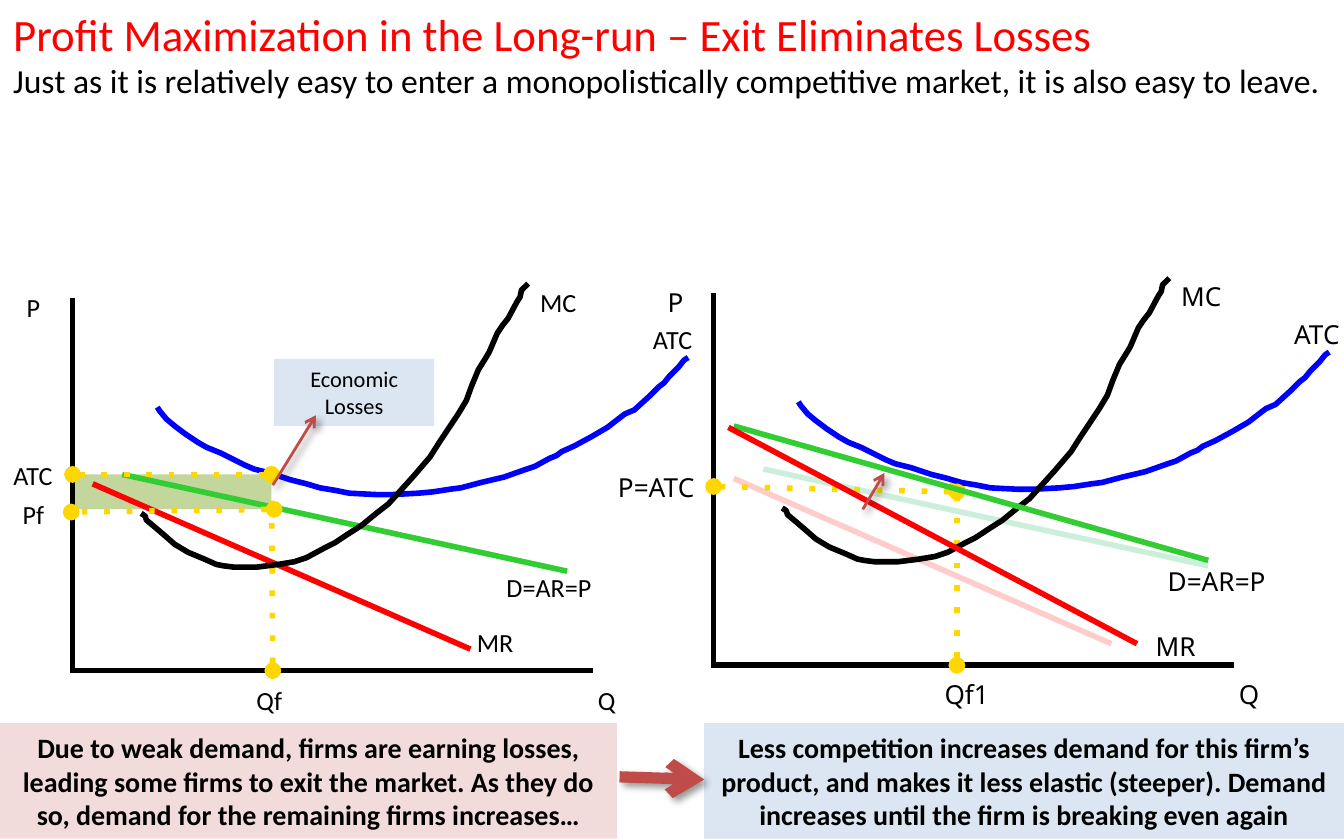
from pptx import Presentation
from pptx.dml.color import RGBColor as RGB
from pptx.enum.shapes import MSO_CONNECTOR as CONN, MSO_SHAPE as SHAPE
from pptx.enum.text import MSO_ANCHOR as ANCHOR, MSO_AUTO_SIZE as AUTO, PP_ALIGN as ALIGN
from pptx.oxml.ns import qn
from pptx.util import Emu, Pt
from lxml.etree import SubElement

PX = 9144  # one px is a hundredth of an inch

THEME = {
    "black": "000000", "red": "FF0000", "blue": "0000FF", "green": "32CD32",
    "old_green": "00B050", "gold": "FFD700", "arrow": "BF4C48",
    "loss": "C3D69B", "pale_blue": "DCE6F2", "pale_red": "F2DCDB",
    "font": "Calibri", "font_right": "Noto Sans",
    "title": 24, "subtitle": 18, "label": 14, "callout": 12, "note": 15,
    "curve": 3, "pointer": 1.5, "big_arrow": 6,
}

# Curves of the left market; the right market shifts them
ATC_CURVE = [
    (117, 303), (119, 306), (124, 312), (130, 317), (138, 323), (147, 329),
    (154, 333), (164, 337), (174, 342), (182, 346), (189, 349), (201, 352),
    (216, 357), (228, 360), (238, 363), (250, 365), (260, 367), (280, 368),
    (292, 368), (311, 367), (322, 366), (335, 364), (343, 363), (358, 359),
    (375, 355), (392, 349), (398, 347), (409, 341), (414, 339), (418, 336),
    (427, 332), (440, 325), (452, 318), (461, 311), (465, 308), (472, 305),
    (483, 295), (490, 288), (494, 285), (498, 280), (505, 273), (509, 268),
    (512, 266),
]
MC_CURVE = [
    (105, 382), (108, 384), (109, 387), (115, 392), (122, 398), (130, 405),
    (140, 411), (152, 416), (161, 420), (166, 421), (174, 422), (191, 422),
    (207, 420), (219, 418), (228, 415), (241, 408), (249, 404), (258, 398),
    (269, 391), (280, 382), (289, 375), (299, 364), (308, 354), (320, 340),
    (327, 329), (341, 308), (347, 298), (351, 287), (356, 275), (361, 267),
    (364, 262), (370, 248), (374, 242), (378, 237), (385, 224), (387, 221),
    (388, 216), (393, 211),
]


def px(*lengths):
    return [Emu(n * PX) for n in lengths]


def color(name):
    return RGB.from_string(THEME[name])


def assign(obj, **values):
    for name, value in values.items():
        setattr(obj, name, value)


def write(sp, lines, font="font", bold=False, align=ALIGN.LEFT, anchor=ANCHOR.TOP):
    """Fill a shape with paragraphs given as (text, size, colour)."""
    tf = sp.text_frame
    assign(tf, word_wrap=True, auto_size=AUTO.SHAPE_TO_FIT_TEXT, vertical_anchor=anchor)
    for i, (text, size, ink) in enumerate(lines):
        p = tf.paragraphs[0] if i == 0 else tf.add_paragraph()
        p.alignment = align
        r = p.add_run()
        r.text = text
        assign(r.font, name=THEME[font], size=Pt(THEME[size]), bold=bold)
        r.font.color.rgb = color(ink)


def add_label(shapes, text, x, y, w, h=34, **style):
    write(shapes.add_textbox(*px(x, y, w, h)), [(text, "label", "black")], **style)


def add_box(shapes, x, y, w, h, fill, text=None, size="note", bold=False):
    sp = shapes.add_shape(SHAPE.RECTANGLE, *px(x, y, w, h))
    sp.shadow.inherit = False
    sp.fill.solid()
    sp.fill.fore_color.rgb = color(fill)
    sp.line.fill.background()
    if text:
        write(sp, [(text, size, "black")], bold=bold,
              align=ALIGN.CENTER, anchor=ANCHOR.MIDDLE)


def stroke(sp, ink, width="curve"):
    sp.line.color.rgb = color(ink)
    sp.line.width = Pt(THEME[width])


def add_line(shapes, start, end, ink, width="curve", alpha=None):
    ln = shapes.add_connector(CONN.STRAIGHT, *px(*start, *end))
    stroke(ln, ink, width)
    SubElement(ln._element.spPr, qn("a:effectLst"))
    if alpha:
        rgb = next(ln._element.iter(qn("a:srgbClr")))
        SubElement(rgb, qn("a:alpha"), val=str(alpha * 1000))
    return ln


def add_guide(shapes, start, end):
    """Dotted gold line with a dot at both ends."""
    ln = add_line(shapes, start, end, "gold").line._get_or_add_ln()
    SubElement(ln, qn("a:prstDash"), val="dot")
    for tip in ("a:headEnd", "a:tailEnd"):
        SubElement(ln, qn(tip), type="oval")


def add_arrow(shapes, start, end, width="pointer"):
    """Arrow with a soft shadow."""
    arrow = add_line(shapes, start, end, "arrow", width)
    SubElement(arrow.line._get_or_add_ln(), qn("a:tailEnd"), type="arrow")
    effects = arrow._element.spPr.find(qn("a:effectLst"))
    shadow = SubElement(effects, qn("a:outerShdw"), blurRad=str(Pt(4)),
                        dist=str(Pt(3)), dir=str(45 * 60000), rotWithShape="0")
    rgb = SubElement(shadow, qn("a:srgbClr"), val=THEME["black"])
    SubElement(rgb, qn("a:alpha"), val="40000")


def add_curve(shapes, points, ink, dx, dy):
    first, *rest = [(x + dx, y + dy) for x, y in points]
    fb = shapes.build_freeform(*first, scale=PX)
    fb.add_line_segments(rest, close=False)
    sp = fb.convert_to_shape()
    sp.shadow.inherit = False
    sp.fill.background()
    stroke(sp, ink)


def add_axes(shapes, dx=0, dy=0, font="font"):
    """Axes and the labels that both markets share."""
    add_line(shapes, (54 + dx, 222 + dy), (54 + dx, 500 + dy), "black")
    add_line(shapes, (52 + dx, 499 + dy), (441 + dx, 499 + dy), "black")
    for text, x, y, w in [("P", 10, 212, 44), ("Q", 435, 504, 49),
                          ("MC", 392, 208, 64), ("ATC", 476, 236, 72)]:
        add_label(shapes, text, x + dx, y + dy, w, font=font)


def add_cost_curves(shapes, dx=0, dy=0):
    add_curve(shapes, ATC_CURVE, "blue", dx, dy)
    add_curve(shapes, MC_CURVE, "black", dx, dy)


def add_loss_market(shapes):
    add_box(shapes, 54, 353, 148, 26, "loss")
    add_axes(shapes)
    add_label(shapes, "Pf", 7, 366, 44)
    add_label(shapes, "Qf", 181, 504, 49)
    add_label(shapes, "D=AR=P", 367, 420, 116)
    add_label(shapes, "MR", 345, 461, 64)
    add_label(shapes, "ATC", -16, 337, 81, align=ALIGN.CENTER)
    add_line(shapes, (91, 353), (422, 425), "green")
    add_line(shapes, (69, 360), (350, 483), "red")
    add_guide(shapes, (203, 499), (202, 353))
    add_box(shapes, 204, 267, 119, 50, "pale_blue", "Economic Losses", "callout")
    add_cost_curves(shapes)
    add_guide(shapes, (202, 353), (54, 353))
    add_guide(shapes, (204, 379), (53, 381))
    add_arrow(shapes, (203, 361), (235, 309))


def add_break_even_market(shapes):
    shift, font = (477, -4), "font_right"
    add_axes(shapes, *shift, font=font)
    add_label(shapes, "P=ATC", 450, 346, 86, font=font)
    add_label(shapes, "Qf1", 693, 500, 57, font=font)
    add_label(shapes, "D=AR=P", 859, 416, 116, 38, font=font)
    add_label(shapes, "MR", 850, 464, 64, 38, font=font)
    # Former demand and marginal revenue, faded
    add_line(shapes, (568, 349), (899, 421), "old_green", alpha=20)
    add_line(shapes, (546, 356), (827, 479), "red", alpha=20)
    add_guide(shapes, (712, 495), (712, 362))
    add_cost_curves(shapes, *shift)
    add_guide(shapes, (712, 366), (531, 362))
    # New demand and marginal revenue
    add_line(shapes, (546, 317), (899, 417), "green")
    add_line(shapes, (542, 318), (846, 479), "red")
    add_arrow(shapes, (642, 379), (658, 352))


def main():
    prs = Presentation()
    prs.slide_width, prs.slide_height = px(1000, 625)
    s = prs.slides.add_slide(prs.slide_layouts[6])

    # Heading
    write(s.shapes.add_textbox(*px(0, 0, 1000, 81)), [
        ("Profit Maximization in the Long-run – Exit Eliminates Losses", "title", "red"),
        ("Just as it is relatively easy to enter a monopolistically competitive market, "
         "it is also easy to leave.", "subtitle", "black"),
    ])

    # Markets before and after exit
    add_loss_market(s.shapes.add_group_shape().shapes)
    add_break_even_market(s.shapes.add_group_shape().shapes)

    # Explanations
    add_box(s.shapes, 0, 538, 459, 86, "pale_red",
            "Due to weak demand, firms are earning losses, leading some firms to exit the "
            "market. As they do so, demand for the remaining firms increases…", bold=True)
    add_box(s.shapes, 524, 538, 476, 86, "pale_blue",
            "Less competition increases demand for this firm’s product, and makes it less "
            "elastic (steeper). Demand increases until the firm is breaking even again",
            bold=True)
    add_arrow(s.shapes, (461, 578), (524, 580), "big_arrow")

    prs.save("out.pptx")


if __name__ == "__main__":
    main()
